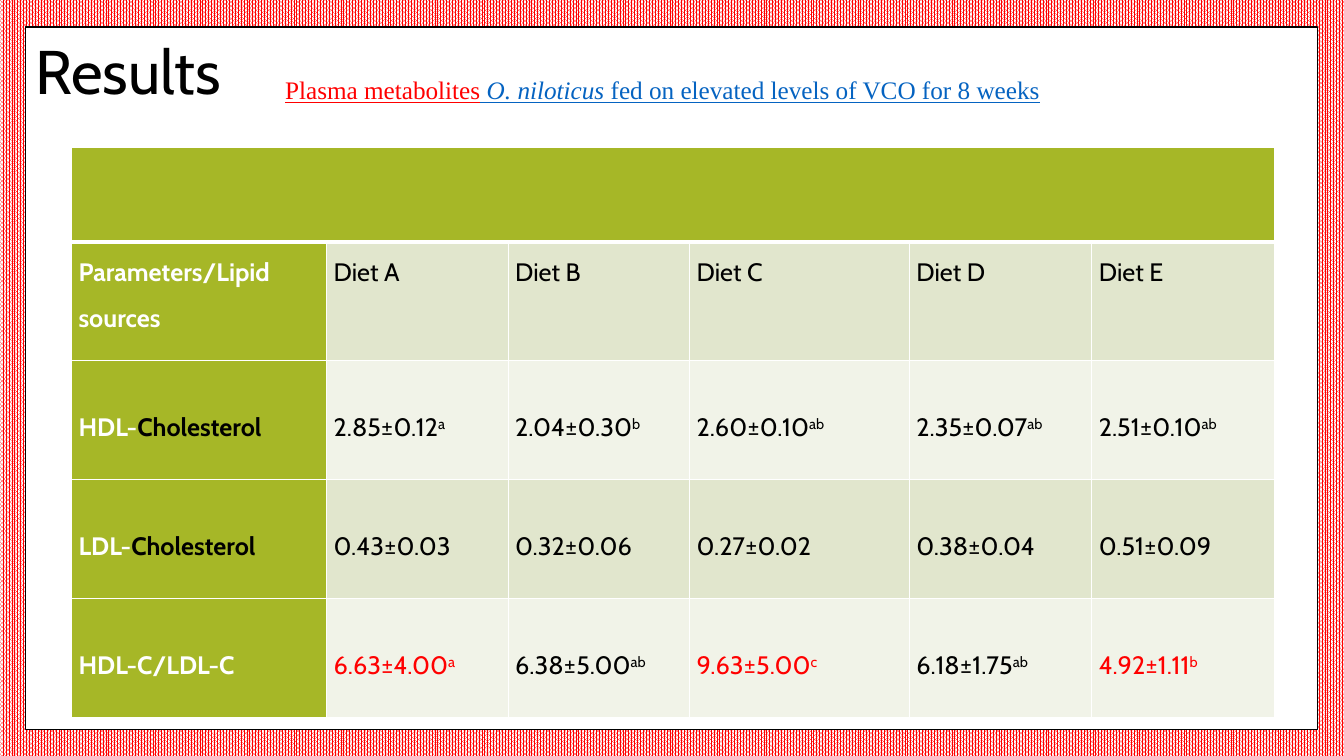
from dataclasses import dataclass

from lxml import etree
from pptx import Presentation
from pptx import util as u
from pptx.dml.color import RGBColor
from pptx.enum import dml, shapes, text
from pptx.oxml.ns import qn

EMU_PER_PX = 9144  # 100 px to the inch


@dataclass(frozen=True)
class Theme:
    black: str = "000000"
    white: str = "FFFFFF"
    red: str = "FF0000"
    link_blue: str = "0563C1"
    green: str = "A6B727"
    band_dark: str = "E1E6CD"
    band_light: str = "F1F3E8"
    heading_font: str = "Cabin"
    caption_font: str = "Times New Roman"
    title_size: int = 44
    body_size: int = 18


@dataclass(frozen=True)
class Box:
    left: int
    top: int
    width: int
    height: int

    def emu(self) -> tuple[int, int, int, int]:
        return px(self.left), px(self.top), px(self.width), px(self.height)


@dataclass(frozen=True)
class Piece:
    text: str
    color: str
    italic: bool = False
    superscript: bool = False


@dataclass(frozen=True)
class Measure:
    value: str
    group: str = ""
    highlighted: bool = False

    def pieces(self) -> list[Piece]:
        color = THEME.red if self.highlighted else THEME.black
        pieces = [Piece(self.value, color)]
        if self.group:
            pieces.append(Piece(self.group, color, superscript=True))
        return pieces


@dataclass(frozen=True)
class Row:
    label: str
    measures: list[Measure]
    label_ending: str = ""
    anchor: text.MSO_ANCHOR = text.MSO_ANCHOR.MIDDLE

    def label_pieces(self) -> list[Piece]:
        pieces = [Piece(self.label, THEME.white)]
        if self.label_ending:
            pieces.append(Piece(self.label_ending, THEME.black))
        return pieces


THEME = Theme()
PANEL = Box(25, 27, 1282, 697)
TITLE = Box(25, 0, 1080, 148)
CAPTION = Box(273, 39, 1060, 71)
TABLE = Box(71, 146, 1194, 566)
COLUMN_WIDTHS = [253, 180, 180, 218, 181, 181]
ROW_HEIGHTS = [94] + [118] * 4

CAPTION_PIECES = [
    Piece("Plasma metabolites", THEME.red),
    Piece(" ", THEME.link_blue),
    Piece("O. niloticus", THEME.link_blue, italic=True),
    Piece(" fed on elevated levels of VCO for 8 weeks", THEME.link_blue),
]
ROWS = [
    Row("Parameters/Lipid sources", [Measure(f"Diet {name}") for name in "ABCDE"],
        anchor=text.MSO_ANCHOR.TOP),
    Row("HDL-", [Measure("2.85±0.12", "a"), Measure("2.04±0.30", "b"),
                 Measure("2.60±0.10", "ab"), Measure("2.35±0.07", "ab"),
                 Measure("2.51±0.10", "ab")], "Cholesterol"),
    Row("LDL-", [Measure("0.43±0.03"), Measure("0.32±0.06"), Measure("0.27±0.02"),
                 Measure("0.38±0.04"), Measure("0.51±0.09")], "Cholesterol"),
    Row("HDL-C/LDL-C", [Measure("6.63±4.00", "a", True), Measure("6.38±5.00", "ab"),
                        Measure("9.63±5.00", "c", True), Measure("6.18±1.75", "ab"),
                        Measure("4.92±1.11", "b", True)]),
]


def px(length: int) -> int:
    return u.Emu(length * EMU_PER_PX)


def rgb(color: str) -> RGBColor:
    return RGBColor.from_string(color)


def write(paragraph, pieces: list[Piece], font: str, size: int, spacing: float,
          bold: bool = False) -> None:
    paragraph.line_spacing = spacing
    paragraph.font.name = font
    paragraph.font.size = u.Pt(size)
    paragraph.font.bold = bold
    for piece in pieces:
        run = paragraph.add_run()
        run.text = piece.text
        run.font.color.rgb = rgb(piece.color)
        if piece.italic:
            run.font.italic = True
        if piece.superscript:
            run._r.get_or_add_rPr().set("baseline", "30000")


def set_borders(cell, top: int, bottom: int) -> None:
    """Draw white cell borders; top and bottom widths are in points."""
    properties = cell._tc.get_or_add_tcPr()
    for side, width in (("L", 1), ("R", 1), ("T", top), ("B", bottom)):
        line = etree.SubElement(properties, qn(f"a:ln{side}"), w=str(u.Pt(width)))
        fill = etree.SubElement(line, qn("a:solidFill"))
        etree.SubElement(fill, qn("a:srgbClr"), val=THEME.white)


def paint(cell, color: str) -> None:
    cell.fill.solid()
    cell.fill.fore_color.rgb = rgb(color)


def fill_cell(cell, pieces: list[Piece], color: str, anchor, bold: bool) -> None:
    paint(cell, color)
    cell.vertical_anchor = anchor
    cell.margin_left = cell.margin_right = px(7)
    cell.margin_top = cell.margin_bottom = 0
    write(cell.text_frame.paragraphs[0], pieces, THEME.heading_font,
          THEME.body_size, 1.5, bold)


def add_background(slide) -> None:
    fill = slide.background.fill
    fill.patterned()
    fill.pattern = dml.MSO_PATTERN.PERCENT_80
    fill.fore_color.rgb = rgb(THEME.red)
    fill.back_color.rgb = rgb(THEME.white)


def add_title(slide) -> None:
    title = slide.shapes.title
    title.left, title.top, title.width, title.height = TITLE.emu()
    frame = title.text_frame
    frame.word_wrap = True
    frame.auto_size = text.MSO_AUTO_SIZE.NONE
    frame.vertical_anchor = text.MSO_ANCHOR.MIDDLE
    paragraph = frame.paragraphs[0]
    paragraph.alignment = text.PP_ALIGN.LEFT
    write(paragraph, [Piece("Results", THEME.black)], THEME.heading_font,
          THEME.title_size, 0.9)


def add_panel(slide) -> None:
    """Add the white panel behind the title."""
    panel = slide.shapes.add_shape(shapes.MSO_SHAPE.RECTANGLE, *PANEL.emu())
    panel.shadow.inherit = False
    panel.fill.solid()
    panel.fill.fore_color.rgb = rgb(THEME.white)
    panel.line.color.rgb = rgb(THEME.black)
    panel.line.width = u.Pt(1)
    slide.shapes.title.element.addprevious(panel.element)


def add_results_table(slide) -> None:
    table = slide.shapes.add_table(len(ROW_HEIGHTS), len(COLUMN_WIDTHS),
                                   *TABLE.emu()).table
    table.first_row = table.horz_banding = False
    for column, width in zip(table.columns, COLUMN_WIDTHS):
        column.width = px(width)
    for index, (row, height) in enumerate(zip(table.rows, ROW_HEIGHTS)):
        row.height = px(height)
        for cell in row.cells:
            set_borders(cell, 3 if index == 1 else 1, 3 if index == 0 else 1)

    banner = table.cell(0, 0)
    banner.merge(table.cell(0, len(COLUMN_WIDTHS) - 1))
    paint(banner, THEME.green)
    for index, row in enumerate(ROWS, start=1):
        fill_cell(table.cell(index, 0), row.label_pieces(), THEME.green, row.anchor, True)
        band = THEME.band_dark if index % 2 else THEME.band_light
        for column, measure in enumerate(row.measures, start=1):
            fill_cell(table.cell(index, column), measure.pieces(), band, row.anchor, False)


def add_caption(slide) -> None:
    frame = slide.shapes.add_textbox(*CAPTION.emu()).text_frame
    frame.word_wrap = True
    frame.auto_size = text.MSO_AUTO_SIZE.SHAPE_TO_FIT_TEXT
    paragraph = frame.paragraphs[0]
    paragraph.alignment = text.PP_ALIGN.JUSTIFY
    paragraph.font.underline = True
    write(paragraph, CAPTION_PIECES, THEME.caption_font, THEME.body_size, 2.0)


def main() -> None:
    presentation = Presentation()
    presentation.slide_width, presentation.slide_height = px(1333), px(750)
    slide = presentation.slides.add_slide(presentation.slide_layouts.get_by_name("Title Only"))
    add_background(slide)
    add_title(slide)
    add_panel(slide)
    add_results_table(slide)
    add_caption(slide)
    presentation.save("out.pptx")


if __name__ == "__main__":
    main()
